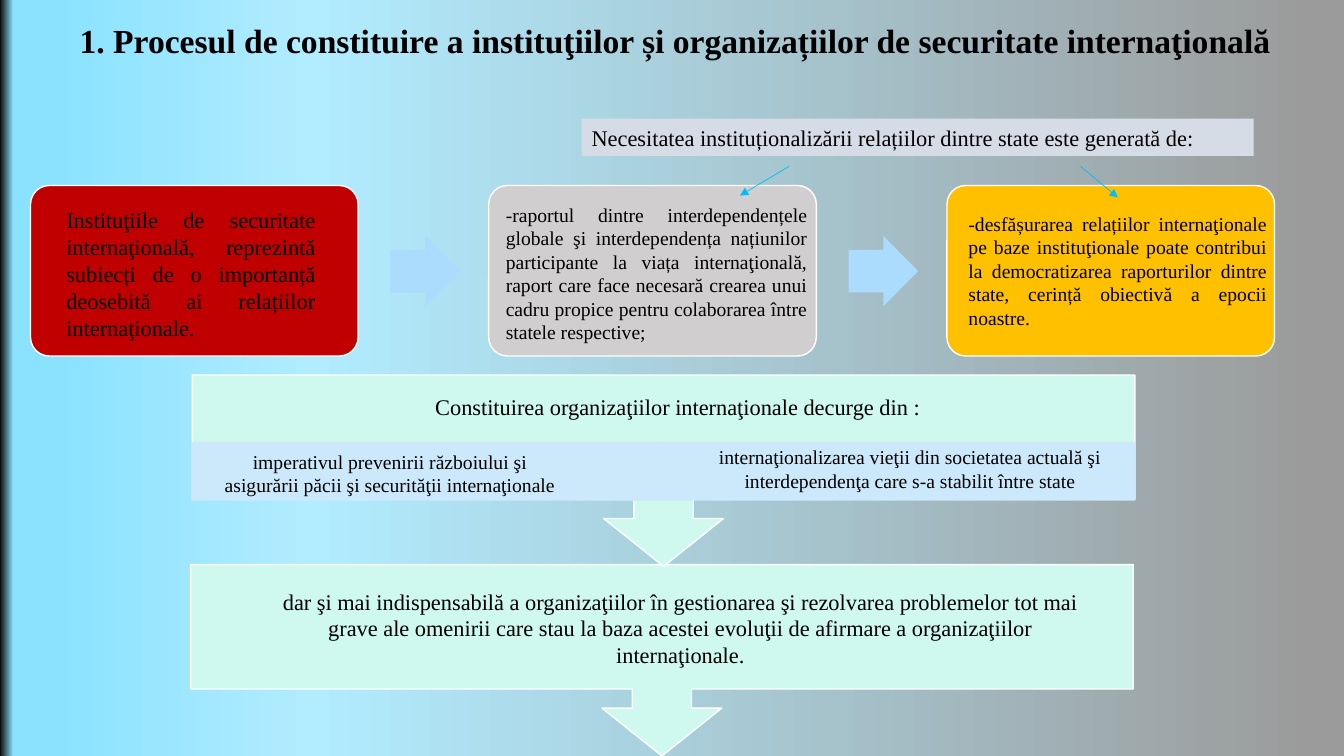
from lxml.etree import SubElement
from pptx import Presentation
from pptx.dml.color import RGBColor
from pptx.enum.shapes import MSO_CONNECTOR, MSO_SHAPE
from pptx.enum.text import MSO_ANCHOR, MSO_AUTO_SIZE, PP_ALIGN
from pptx.oxml.ns import qn
from pptx.util import Pt

COLORS = {
    "text": "000000", "white": "FFFFFF", "red": "C00000", "grey": "D0CECE",
    "gold": "FFC000", "sky": "ABDBFD", "label": "D6DCE5", "pointer": "00BDFB",
    "mint": "CFF8EF", "strip": "CCE8FD",
}
FONT = "Times New Roman"
LEFT, CENTER, JUSTIFY = PP_ALIGN.LEFT, PP_ALIGN.CENTER, PP_ALIGN.JUSTIFY


def add_shape(kind, box, fill, line=None, adjustments=()):
    sp = s.shapes.add_shape(kind, *map(Pt, box))
    sp.shadow.inherit = False
    sp.fill.solid()
    sp.fill.fore_color.rgb = RGBColor.from_string(COLORS[fill])
    if line:
        sp.line.color.rgb = RGBColor.from_string(COLORS[line])
        sp.line.width = Pt(1)
    else:
        sp.line.fill.background()
    for i, value in enumerate(adjustments):
        sp.adjustments[i] = value
    return sp


def write(sp, text, size, align=LEFT, bold=False, wrap=True):
    tf = sp.text_frame
    frame = {"word_wrap": wrap, "auto_size": MSO_AUTO_SIZE.NONE,
             "vertical_anchor": MSO_ANCHOR.TOP}
    for name, value in frame.items():
        setattr(tf, name, value)
    p = tf.paragraphs[0]
    p.alignment = align
    r = p.add_run()
    r.text = text
    for name, value in {"name": FONT, "size": Pt(size), "bold": bold}.items():
        setattr(r.font, name, value)
    r.font.color.rgb = RGBColor.from_string(COLORS["text"])


prs = Presentation()
prs.slide_width, prs.slide_height = Pt(960), Pt(540)
s = prs.slides.add_slide(prs.slide_layouts[5])

# Background gradient, running from right to left
fill = s.background.fill
fill.gradient()
fill.gradient_angle = 180
stops = s.background._cSld.find(".//" + qn("a:gsLst"))
for stop in list(stops):
    stops.remove(stop)
for percent, color in [(2, "9B9B9B"), (77, "B1ECFF"), (96, "8AE2FF"),
                       (99, "8AE2FF"), (100, "0D0D0D")]:
    stop = SubElement(stops, qn("a:gs"), pos=str(percent * 1000))
    SubElement(stop, qn("a:srgbClr"), val=color)

# Title
title = s.shapes.title
for name, value in {"left": 49.7, "top": 10.8, "width": 895, "height": 36}.items():
    setattr(title, name, Pt(value))
write(title, "1. Procesul de constituire a instituţiilor și organizațiilor de "
      "securitate internaţională", 24, bold=True)

# Row of three cards with arrows between them
CARD_STEP = 327.3
for i, color in enumerate(["red", "grey", "gold"]):
    x = 21.8 + i * CARD_STEP
    add_shape(MSO_SHAPE.ROUNDED_RECTANGLE, (x, 132.5, 234, 121.8),
              color, "white", [0.11])
    if i < 2:
        add_shape(MSO_SHAPE.RIGHT_ARROW, (x + 257, 168.5, 49.7, 50.4),
                  "sky", adjustments=[0.6, 0.5])

# Label and its two pointers
label = add_shape(MSO_SHAPE.RECTANGLE, (415.5, 84.8, 480, 26.6), "label")
write(label, "Necesitatea instituționalizării relațiilor dintre state este "
      "generată de:", 16)
for x1, x2, y2 in [(771.8, 798.5, 141.1), (563.8, 528.5, 139.7)]:
    pointer = s.shapes.add_connector(MSO_CONNECTOR.STRAIGHT,
                                     Pt(x1), Pt(118.8), Pt(x2), Pt(y2))
    pointer.line.color.rgb = RGBColor.from_string(COLORS["pointer"])
    pointer.line.width = Pt(0.5)
    SubElement(pointer.line._get_or_add_ln(), qn("a:tailEnd"), type="triangle")
    SubElement(pointer._element.spPr, qn("a:effectLst"))

# Two stacked boxes with down arrows
for x, y in [(136.2, 403.3), (137.4, 267.9)]:
    add_shape(MSO_SHAPE.DOWN_ARROW_CALLOUT, (x, y, 673.2, 136.7), "mint", "white",
              [0.31, 0.313, 0.25, 0.65])

# Translucent strip in two halves
for i in range(2):
    half = add_shape(MSO_SHAPE.RECTANGLE, (137.4 + i * 336.6, 316.1, 336.6, 41),
                     "strip", "strip")
    for clr in half._element.spPr.iter(qn("a:srgbClr")):
        SubElement(clr, qn("a:alpha"), val="90000")

# Texts over the shapes
texts = [
    ((40.3, 144, 192.2, 104.4), 16, JUSTIFY, True,
     "Instituţiile de securitate internaţională, reprezintă subiecți de o "
     "importanță deosebită ai relațiilor internaţionale."),
    ((354.2, 141.1, 229.7, 108.7), 14, JUSTIFY, True,
     "-raportul dintre interdependențele globale şi interdependența națiunilor "
     "participante la viața internaţională, raport care face necesară crearea "
     "unui cadru propice pentru colaborarea între statele respective;"),
    ((684.7, 147.6, 227.5, 92.2), 14, JUSTIFY, True,
     "-desfășurarea relațiilor internaţionale pe baze instituţionale poate "
     "contribui la democratizarea raporturilor dintre state, cerință obiectivă "
     "a epocii noastre."),
    ((303.8, 277.2, 366.5, 26.6), 16, LEFT, False,
     "Constituirea organizaţiilor internaţionale decurge din :"),
    ((150.5, 317.5, 256.3, 41), 14, CENTER, True,
     "imperativul prevenirii războiului şi asigurării păcii şi securităţii "
     "internaţionale"),
    ((496.8, 314.6, 306.7, 41), 14, CENTER, True,
     "internaţionalizarea vieţii din societatea actuală şi interdependenţa care "
     "s-a stabilit între state"),
    ((186.5, 416.2, 599, 65.5), 16, CENTER, True,
     "dar şi mai indispensabilă a organizaţiilor în gestionarea şi rezolvarea "
     "problemelor tot mai grave ale omenirii care stau la baza acestei evoluţii "
     "de afirmare a organizaţiilor internaţionale."),
]
for box, size, align, wrap, text in texts:
    write(s.shapes.add_textbox(*map(Pt, box)), text, size, align, wrap=wrap)

prs.save("out.pptx")
